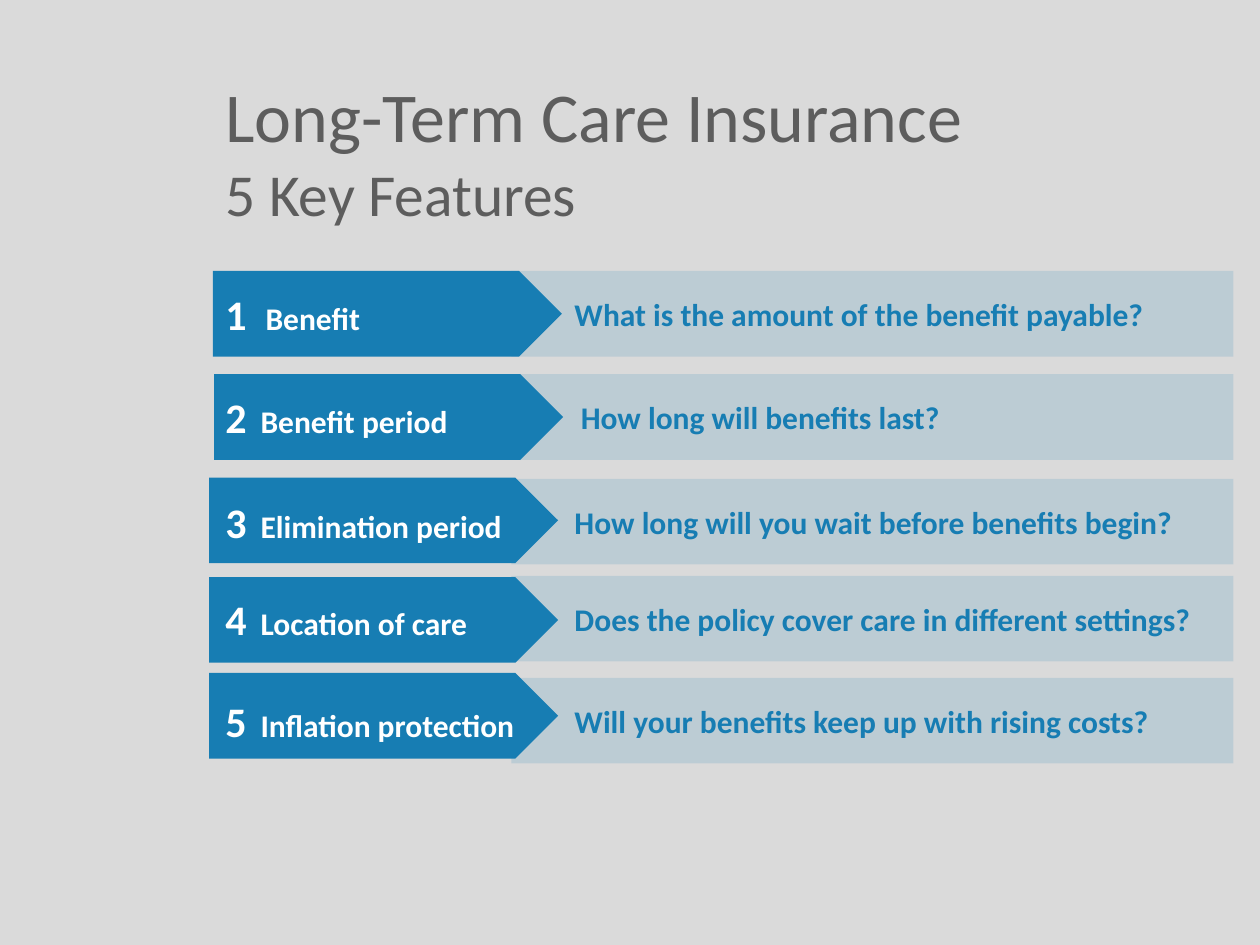
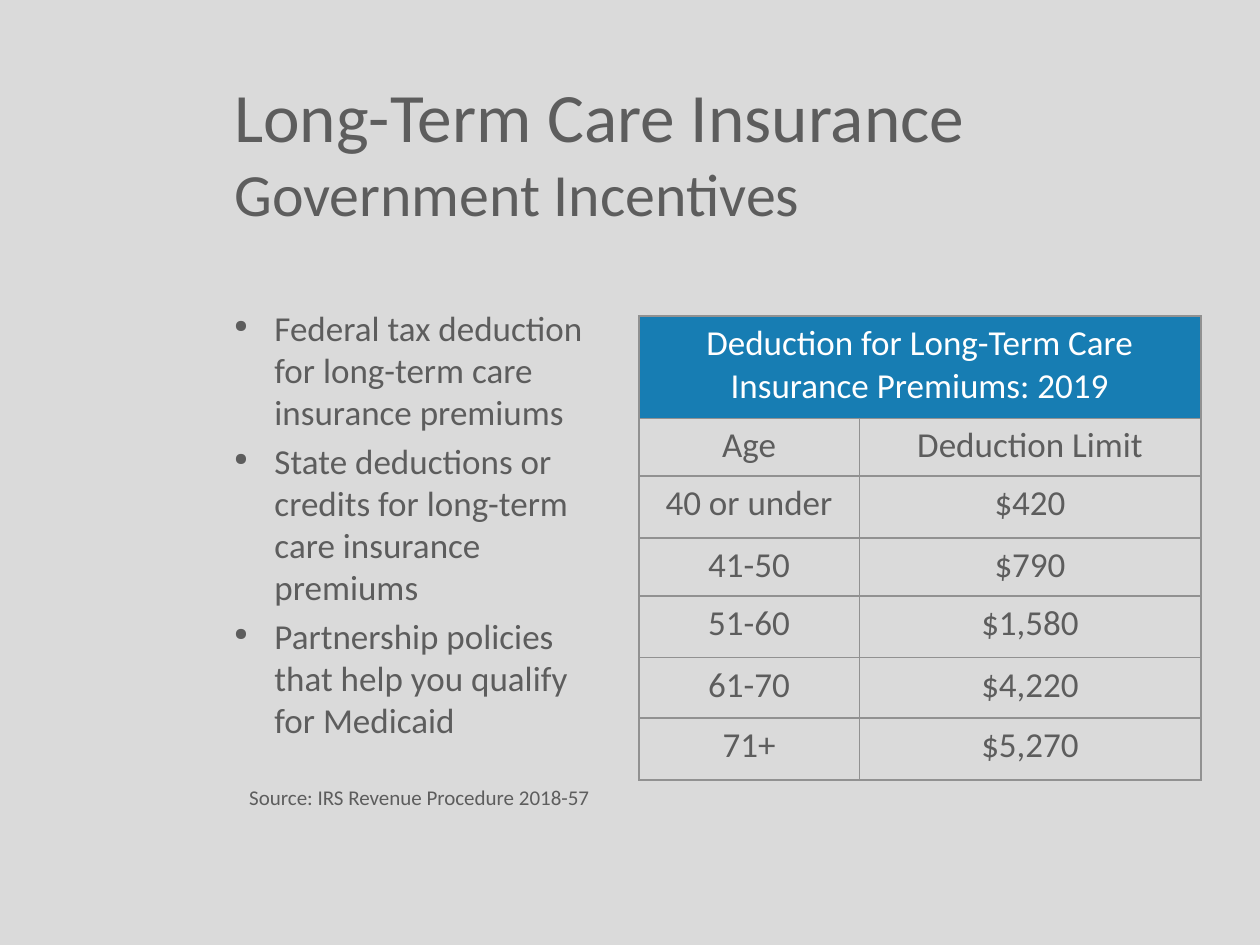
import lxml.etree
import pptx
import pptx.dml.color
import pptx.enum.shapes
import pptx.enum.text
import pptx.oxml.ns
import pptx.util

Inches = pptx.util.Inches
Shape = pptx.enum.shapes.MSO_SHAPE
Align = pptx.enum.text.PP_ALIGN
Anchor = pptx.enum.text.MSO_ANCHOR

FONT = "Calibri"
HUES = {"back": "DADADA", "blue": "177DB3", "text": "5D5D5D", "white": "FFFFFF", "line": "919191"}
BAR = 0.68

# label, question, bar top, arrow left, arrow top, tab stop, question inset
TRAITS = [
    ("Benefit", "What is the amount of the benefit payable?", 2.15, 1.69, 2.15, 0.32, 0.5),
    ("Benefit period", "How long will benefits last?", 2.97, 1.7, 2.97, 0.28, 0.55),
    ("Elimination period", "How long will you wait before benefits begin?", 3.8, 1.66, 3.79, 0.28, 0.5),
    ("Location of care", "Does the policy cover care in different settings?", 4.57, 1.66, 4.58, 0.28, 0.5),
    ("Inflation protection", "Will your benefits keep up with rising costs?", 5.38, 1.66, 5.34, 0.28, 0.5),
]
POINTS = [
    "Federal tax deduction for long-term care insurance premiums",
    "State deductions or credits for long-term care insurance premiums",
    "Partnership policies that help you qualify for Medicaid",
]
LIMITS = [
    ("Deduction for Long-Term Care Insurance Premiums: 2019", ""),
    ("Age", "Deduction Limit"),
    ("40 or under", "$420"),
    ("41-50", "$790"),
    ("51-60", "$1,580"),
    ("61-70", "$4,220"),
    ("71+", "$5,270"),
]
COLS = [1.75, 2.71]
ROWS = [0.81, 0.46, 0.49, 0.46, 0.49, 0.48, 0.49]


def hue(name):
    """Return a named colour."""
    return pptx.dml.color.RGBColor.from_string(HUES[name])


def add(node, tag, **attrs):
    """Append a drawing element to a node."""
    return lxml.etree.SubElement(node, pptx.oxml.ns.qn("a:" + tag), attrs)


def style(run, size, color, bold=False):
    """Format one run."""
    run.font.name = FONT
    run.font.size = pptx.util.Pt(size)
    run.font.color.rgb = hue(color)
    run.font.bold = bold


def text_box(slide, box):
    """Add a wrapping text box and return its frame."""
    frame = slide.shapes.add_textbox(*map(Inches, box)).text_frame
    frame.word_wrap = True
    return frame


def block(slide, kind, box):
    """Add a plain blue shape."""
    shape = slide.shapes.add_shape(kind, *map(Inches, box))
    shape.shadow.inherit = False
    shape.fill.solid()
    shape.fill.fore_color.rgb = hue("blue")
    shape.line.fill.background()
    return shape


def title_slide(deck, box, lines, sizes):
    """Add a slide with a two-line title."""
    slide = deck.slides.add_slide(deck.slide_layouts[5])
    title = slide.shapes.title
    title.left, title.top, title.width, title.height = map(Inches, box)
    frame = title.text_frame
    frame.text = "\v".join(lines)
    frame.word_wrap = True
    frame.auto_size = pptx.enum.text.MSO_AUTO_SIZE.NONE
    frame.vertical_anchor = Anchor.MIDDLE
    para = frame.paragraphs[0]
    para.alignment = Align.LEFT
    for run, size in zip(para.runs, sizes):
        style(run, size, "text")
    return slide


def question(slide, box, text, inset):
    """Add a pale bar that holds a question."""
    bar = block(slide, Shape.RECTANGLE, box)
    tint = next(bar.fill._xPr.iter(pptx.oxml.ns.qn("a:srgbClr")))
    add(tint, "alpha", val="15000")
    frame = bar.text_frame
    frame.text = text
    frame.word_wrap = True
    frame.margin_left = Inches(inset)
    frame.vertical_anchor = Anchor.MIDDLE
    para = frame.paragraphs[0]
    para.alignment = Align.LEFT
    style(para.runs[0], 18, "blue", True)


def label(slide, box, number, text, stop):
    """Add a numbered label with a tab after the number."""
    frame = text_box(slide, box)
    frame.vertical_anchor = Anchor.MIDDLE
    para = frame.paragraphs[0]
    tabs = add(para._p.get_or_add_pPr(), "tabLst")
    add(tabs, "tab", pos=str(Inches(stop)), algn="l")
    para.text = str(number)
    para.add_run().text = "\t" + text
    for run, size in zip(para.runs, (24, 18)):
        style(run, size, "white", True)


def traits(slide):
    """Add the five rows of features."""
    for number, (name, ask, top, left, tip, stop, inset) in enumerate(TRAITS, 1):
        question(slide, (4.06, top, 5.73, BAR), ask, inset)
        block(slide, Shape.PENTAGON, (left, tip, 2.77, BAR))
        label(slide, (1.69, top, 2.6, BAR), number, name, stop)


def bullets(slide, box):
    """Add the bulleted points."""
    frame = text_box(slide, box)
    frame.text = "\n".join(POINTS)
    for index, para in enumerate(frame.paragraphs):
        props = para._p.get_or_add_pPr()
        props.set("marL", str(Inches(0.32)))
        props.set("indent", str(-Inches(0.32)))
        add(add(props, "buClr"), "srgbClr", val=HUES["text"])
        add(props, "buSzPct", val="50000")
        add(props, "buChar", char="●")
        if index:
            para.space_before = pptx.util.Pt(4)
        style(para.runs[0], 20, "text")


def border(cell):
    """Draw thin lines around a cell."""
    props = cell._tc.get_or_add_tcPr()
    for side in ("lnL", "lnR", "lnT", "lnB"):
        line = add(props, side, w=str(pptx.util.Pt(1)))
        add(add(line, "solidFill"), "srgbClr", val=HUES["line"])


def limits(slide, left, top):
    """Add the table of deduction limits."""
    size = (left, top, sum(COLS), sum(ROWS))
    table = slide.shapes.add_table(len(ROWS), len(COLS), *map(Inches, size)).table
    table.first_row = table.horz_banding = False
    for col, width in zip(table.columns, COLS):
        col.width = Inches(width)
    for row, height, words in zip(table.rows, ROWS, LIMITS):
        row.height = Inches(height)
        for cell, text in zip(row.cells, words):
            border(cell)
            cell.fill.background()
            cell.text = text
            para = cell.text_frame.paragraphs[0]
            para.alignment = Align.CENTER
            for run in para.runs:
                style(run, 20, "text")
    head = table.cell(0, 0)
    head.merge(table.cell(0, 1))
    head.fill.solid()
    head.fill.fore_color.rgb = hue("blue")
    style(head.text_frame.paragraphs[0].runs[0], 20, "white")


def source(slide, box):
    """Add the source line."""
    frame = text_box(slide, box)
    frame.text = "Source: IRS Revenue Procedure 2018-57"
    style(frame.paragraphs[0].runs[0], 12, "text")


def main():
    """Build and save both slides."""
    deck = pptx.Presentation()
    deck.slide_width, deck.slide_height = Inches(10), Inches(7.5)
    back = deck.slide_master.background.fill
    back.solid()
    back.fore_color.rgb = hue("back")

    topic = "Long-Term Care Insurance"
    slide = title_slide(deck, (1.69, 0.53, 6.87, 1.33), (topic, "5 Key Features"), (40, 34))
    traits(slide)

    slide = title_slide(deck, (1.76, 0.53, 6.8, 1.33), (topic, "Government Incentives"), (39.6, 34.2))
    bullets(slide, (1.76, 2.38, 3.21, 3.91))
    limits(slide, 5.07, 2.51)
    source(slide, (1.88, 6.18, 5.23, 0.3))
    deck.save("out.pptx")


if __name__ == "__main__":
    main()
